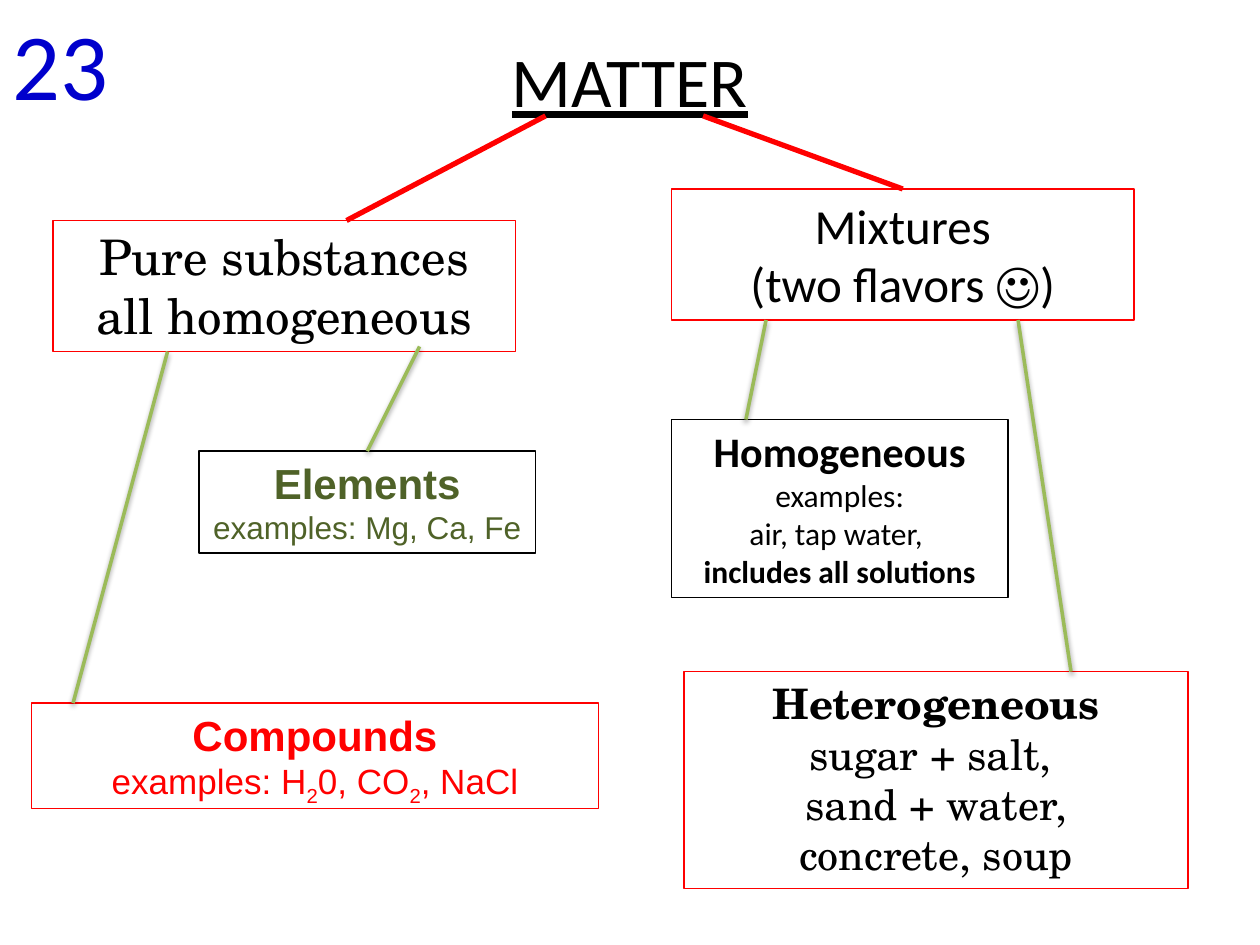
from lxml import etree
from pptx import Presentation
from pptx.dml.color import RGBColor
from pptx.enum.shapes import MSO_CONNECTOR as LINE, MSO_SHAPE as SHAPE
from pptx.enum.text import MSO_ANCHOR as ANCHOR, MSO_AUTO_SIZE as FIT, PP_ALIGN as ALIGN
from pptx.oxml import parse_xml
from pptx.oxml.ns import nsdecls, qn
from pptx.util import Inches, Pt

RED, BLACK, BLUE = "FF0000", "000000", "0000CC"
DARK_GREEN, LIGHT_GREEN = "4F6228", "9BBB59"
SERIF = "TeX Gyre Schola"


def rgb(value):
    return RGBColor.from_string(value)


def write(holder, paragraphs, align=ALIGN.CENTER, **base):
    frame = holder.text_frame
    frame.word_wrap = True
    frame.auto_size = FIT.SHAPE_TO_FIT_TEXT
    frame.vertical_anchor = ANCHOR.TOP
    for number, pieces in enumerate(paragraphs):
        paragraph = frame.add_paragraph() if number else frame.paragraphs[0]
        paragraph.alignment = align
        for text, changes in pieces:
            style = {**base, **changes}
            for row, words in enumerate(text.split("\n")):
                if row:
                    paragraph.add_line_break()
                if not words:
                    continue
                run = paragraph.add_run()
                run.text = words
                run.font.name = style.get("font", "Calibri")
                run.font.size = Pt(style["size"])
                run.font.color.rgb = rgb(style.get("color", BLACK))
                run.font.bold = style.get("bold", False)
                run.font.underline = style.get("underline", False)
                if style.get("subscript"):
                    run.font._element.set("baseline", "-25000")


prs = Presentation()
prs.slide_width, prs.slide_height = Inches(10), Inches(7.5)
slide = prs.slides.add_slide(prs.slide_layouts[5])
shapes = slide.shapes

title = shapes.title
title.left, title.top, title.width, title.height = map(Inches, (0, 0.25, 10, 0.77))
write(title, [[("MATTER", {})]], size=40, underline=True)

BOLD, SUB = {"bold": True}, {"subscript": True}
categories = {
    "pure": ((0.42, 1.75, 3.67, 1.04), RED, dict(font=SERIF, size=28),
             [[("Pure substances\nall homogeneous", {})]]),
    "mixtures": ((5.33, 1.5, 3.67, 1.04), RED, dict(size=28),
                 [[("Mixtures\n(two flavors ☺)", {})]]),
    "elements": ((1.58, 3.58, 2.67, 0.81), BLACK, dict(font="Arial", size=18, color=DARK_GREEN),
                 [[("Elements\n", {"size": 24, "bold": True}), ("examples: Mg, Ca, Fe", {})]]),
    "compounds": ((0.25, 5.58, 4.5, 0.84), RED, dict(font="Arial", size=20, color=RED),
                  [[("Compounds\n", {"size": 24, "bold": True}), ("examples: H", {}), ("2", SUB),
                    ("0, CO", {}), ("2", SUB), (", NaCl", {})]]),
    "homogeneous": ((5.33, 3.33, 2.67, 1.41), BLACK, dict(size=18),
                    [[("Homogeneous", {"size": 24, "bold": True})],
                     [("examples:", {})],
                     [("air, tap water, \n", {}), ("includes all solutions", BOLD)]]),
    "heterogeneous": ((5.43, 5.33, 4, 1.72), RED, dict(font=SERIF, size=24),
                      [[("Heterogeneous\n", BOLD),
                        ("sugar + salt, \nsand + water,\nconcrete, soup", {})]]),
}
boxes = {}
for name, (place, border, style, paragraphs) in categories.items():
    box = shapes.add_shape(SHAPE.RECTANGLE, *map(Inches, place))
    box.shadow.inherit = False
    box.fill.background()
    box.line.color.rgb = rgb(border)
    box.line.width = Pt(0.75)
    write(box, paragraphs, **style)
    boxes[name] = box

branches = [
    ((1.33, 2.79, 0.58, 5.58), LIGHT_GREEN, 2, None),
    ((3.33, 2.75, 2.92, 3.58), LIGHT_GREEN, 2, "elements"),
    ((6.08, 2.54, 5.92, 3.33), LIGHT_GREEN, 2, None),
    ((8.08, 2.54, 8.5, 5.33), LIGHT_GREEN, 2, None),
    ((4.33, 0.92, 2.75, 1.75), RED, 3, None),
    ((5.58, 0.92, 7.17, 1.5), RED, 3, "mixtures"),
]
SHADOW = (
    f'<a:effectLst {nsdecls("a")}><a:outerShdw blurRad="{Pt(3.1)}" dist="{Pt(1.6)}" '
    'dir="5400000" rotWithShape="0"><a:srgbClr val="000000"><a:alpha val="38000"/>'
    '</a:srgbClr></a:outerShdw></a:effectLst>'
)
for ends, color, width, target in branches:
    branch = shapes.add_connector(LINE.STRAIGHT, *map(Inches, ends))
    branch.line.color.rgb = rgb(color)
    branch.line.width = Pt(width)
    if target:
        branch.end_connect(boxes[target], 0)
    properties = branch._element.spPr
    if color == LIGHT_GREEN:
        properties.append(parse_xml(SHADOW))
    else:
        etree.SubElement(properties, qn("a:effectLst"))

page_number = shapes.add_textbox(*map(Inches, (0, 0, 1, 1.01)))
write(page_number, [[("23", {})]], align=ALIGN.LEFT, size=54, color=BLUE)

prs.save("out.pptx")
